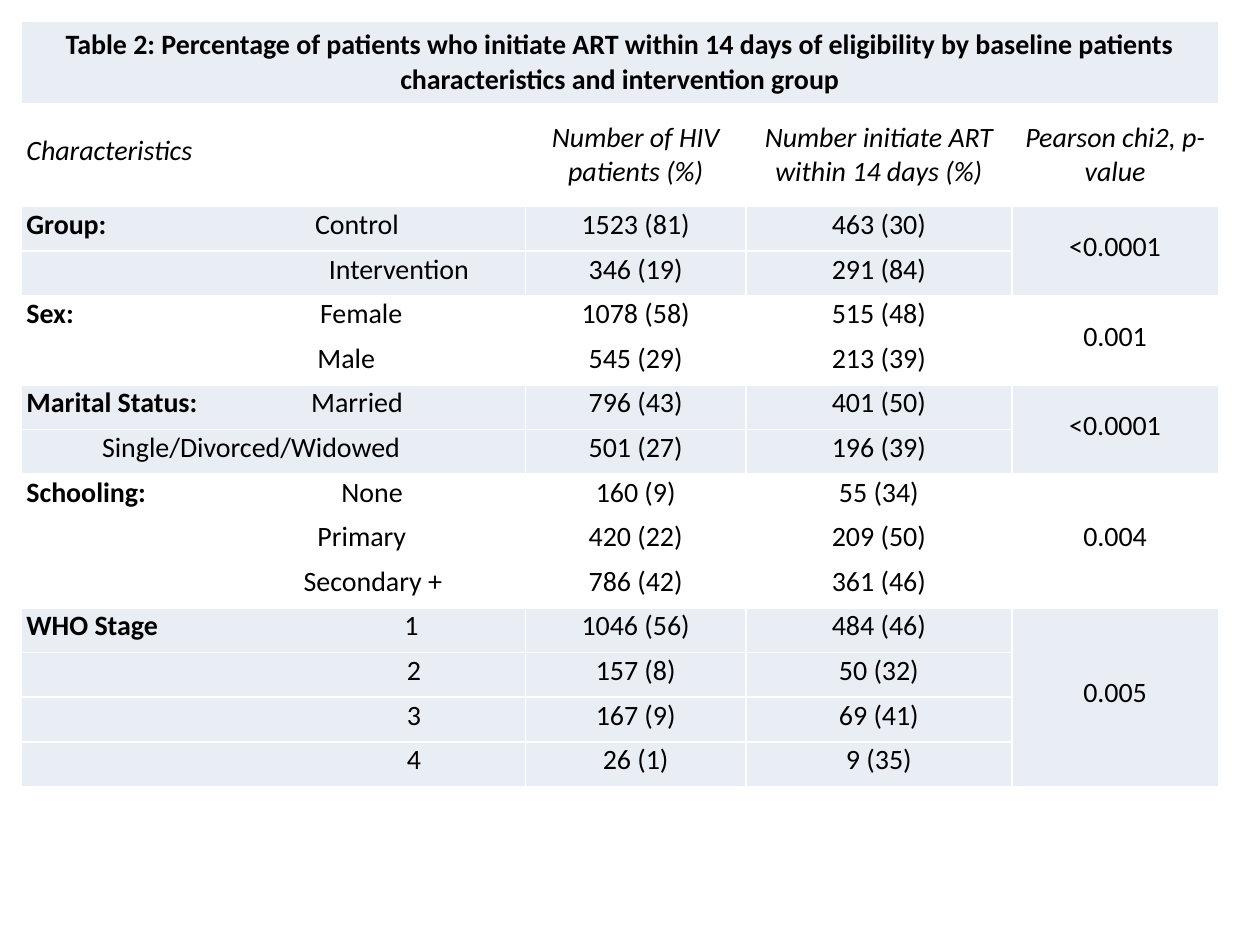
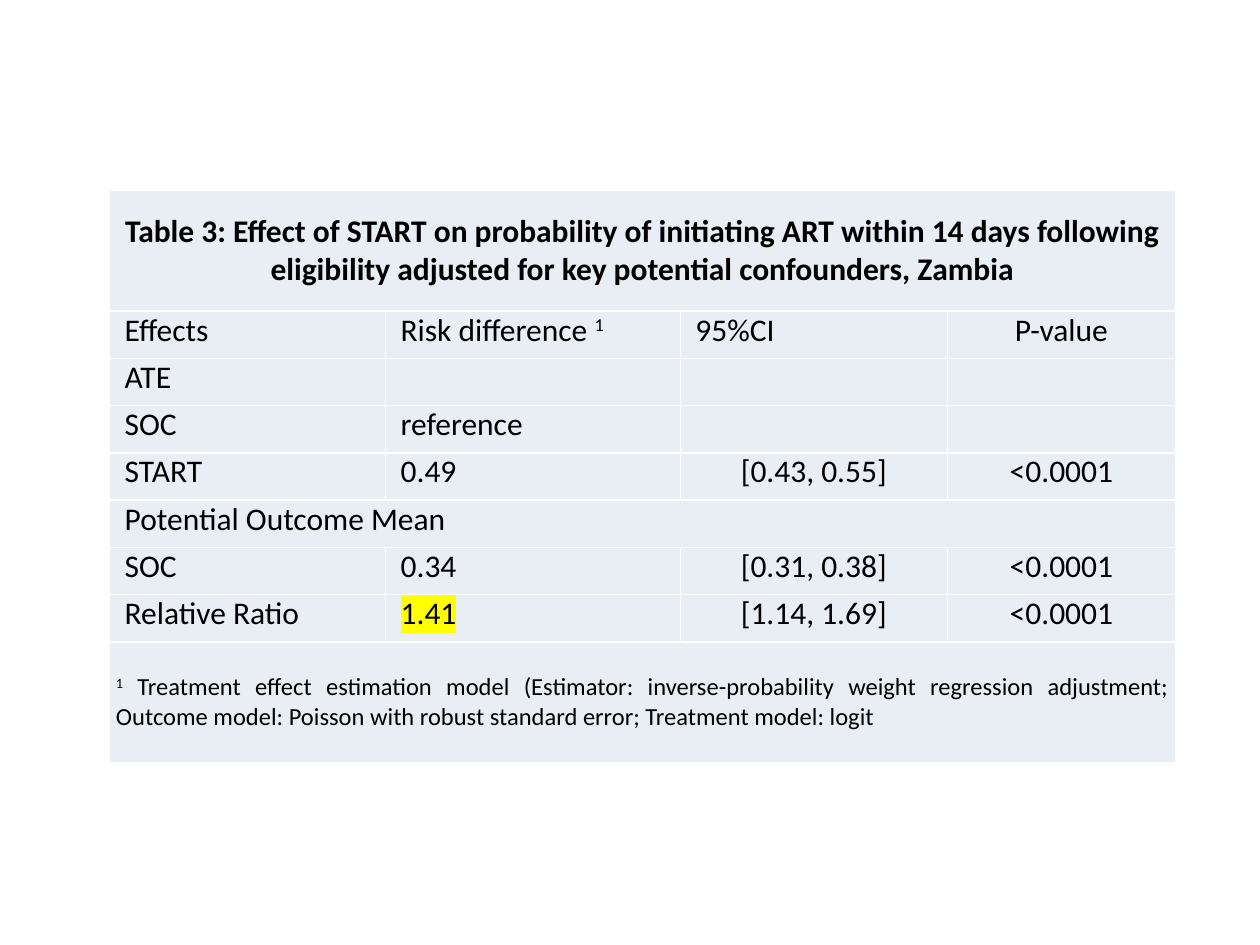
"""Build two slides with result tables of a study on early ART initiation."""
from itertools import product

from lxml.etree import SubElement
from pptx import Presentation
from pptx.dml.color import RGBColor
from pptx.enum.text import MSO_ANCHOR, PP_ALIGN
from pptx.oxml.ns import qn
from pptx.util import Inches, Pt

BAND = RGBColor(0xE9, 0xED, 0xF4)
BLACK = RGBColor(0, 0, 0)
WHITE = RGBColor(0xFF, 0xFF, 0xFF)
YELLOW = RGBColor(0xFF, 0xFF, 0)
FONT = "Calibri"
LEFT, CENTER, JUSTIFY = PP_ALIGN.LEFT, PP_ALIGN.CENTER, PP_ALIGN.JUSTIFY

PATIENTS_TITLE = ("Table 2: Percentage of patients who initiate ART within 14 days of "
                  "eligibility by baseline patients characteristics and intervention group")
PATIENTS_HEADER = ["Characteristics", "Number of HIV patients (%)",
                   "Number initiate ART within 14 days (%)", "Pearson chi2, p-value"]
PATIENT_GROUPS = [
    ("Group:", "<0.0001", [("Control", 2.29, "1523 (81)", "463 (30)"),
                           ("Intervention", 2.4, "346 (19)", "291 (84)")]),
    ("Sex:", "0.001", [("Female", 2.33, "1078 (58)", "515 (48)"),
                       ("Male", 2.31, "545 (29)", "213 (39)")]),
    ("Marital Status:", "<0.0001", [("Married", 2.26, "796 (43)", "401 (50)"),
                                    ("Single/Divorced/Widowed", 0.6, "501 (27)", "196 (39)")]),
    ("Schooling:", "0.004", [("None", 2.5, "160 (9)", "55 (34)"),
                             ("Primary", 2.31, "420 (22)", "209 (50)"),
                             ("Secondary +", 2.2, "786 (42)", "361 (46)")]),
    ("WHO Stage", "0.005", [("1", 3, "1046 (56)", "484 (46)"),
                            ("2", 3.02, "157 (8)", "50 (32)"),
                            ("3", 3.02, "167 (9)", "69 (41)"),
                            ("4", 3.02, "26 (1)", "9 (35)")]),
]

EFFECTS_TITLE = ("Table 3: Effect of START on probability of initiating ART within 14 days "
                 "following eligibility adjusted for key potential confounders, Zambia")
EFFECTS_ROWS = [
    ["Effects", [("Risk difference ", ""), ("1", "super")], "95%CI", "P-value"],
    ["ATE", "", "", ""],
    ["SOC", "reference", "", ""],
    ["START", "0.49", "[0.43, 0.55]", "<0.0001"],
    ["Potential Outcome Mean"],
    ["SOC", "0.34", "[0.31, 0.38]", "<0.0001"],
    ["Relative Ratio", [("1.41", "highlight")], "[1.14, 1.69]", "<0.0001"],
]
EFFECTS_NOTE = [("1", "super"),
                (" Treatment effect estimation model (Estimator: inverse-probability weight "
                 "regression adjustment; Outcome model: Poisson with robust standard error; "
                 "Treatment model: logit", "")]


def add_color(parent, tag, color):
    """Append an element that holds an RGB colour."""
    SubElement(SubElement(parent, qn(tag)), qn("a:srgbClr"), val=str(color))


def add_borders(cell):
    """Draw a white one-point line on each side of a cell."""
    properties = cell._tc.get_or_add_tcPr()
    for side in "LRTB":
        line = SubElement(properties, qn(f"a:ln{side}"), w=str(Pt(1)))
        add_color(line, "a:solidFill", WHITE)


def add_table(slide, left, top, widths, heights):
    """Add a plain table with white grid lines and no fill."""
    table = slide.shapes.add_table(len(heights), len(widths), Inches(left), Inches(top),
                                   Inches(sum(widths)), Inches(sum(heights))).table
    table.first_row = table.horz_banding = False
    for column, width in zip(table.columns, widths):
        column.width = Inches(width)
    for row, height in zip(table.rows, heights):
        row.height = Inches(height)
    for cell in table.iter_cells():
        add_borders(cell)
        cell.fill.background()
    return table


def fill_band(table, rows):
    """Shade every cell of the given rows."""
    for row, column in product(rows, range(len(table.columns))):
        fill = table.cell(row, column).fill
        fill.solid()
        fill.fore_color.rgb = BAND


def add_run(paragraph, text, style):
    """Add a run that may be bold, superscript or highlighted."""
    run = paragraph.add_run()
    run.text = text
    if style == "bold":
        run.font.bold = True
    elif style == "super":
        run._r.get_or_add_rPr().set("baseline", "30000")
    elif style == "highlight":
        add_color(run._r.get_or_add_rPr(), "a:highlight", YELLOW)


def write_cell(cell, content, size, margins, alignment=LEFT, spacing=None,
               bold=None, italic=None, indent=0, tab=0):
    """Write a string or a list of styled runs into a cell."""
    cell.vertical_anchor = MSO_ANCHOR.MIDDLE
    cell.margin_left = cell.margin_right = Inches(margins[0])
    cell.margin_top = cell.margin_bottom = Inches(margins[1])
    paragraph = cell.text_frame.paragraphs[0]
    paragraph.alignment = alignment
    if spacing:
        paragraph.line_spacing = Pt(spacing)
    properties = paragraph._p.get_or_add_pPr()
    if indent:
        properties.set("marL", str(Inches(indent)))
    if tab:
        stops = SubElement(properties, qn("a:tabLst"))
        SubElement(stops, qn("a:tab"), pos=str(Inches(tab)), algn="l")
    font = paragraph.font
    font.name, font.size, font.bold, font.italic = FONT, Pt(size), bold, italic
    font.color.rgb = BLACK
    for text, style in [(content, "")] if isinstance(content, str) else content:
        if text:
            add_run(paragraph, text, style)


def write_full_row(table, row, content, size, margins, **style):
    """Merge a whole row and write into it."""
    cell = table.cell(row, 0)
    cell.merge(table.cell(row, len(table.columns) - 1))
    write_cell(cell, content, size, margins, **style)


def write_group(table, first_row, heading, p_value, categories):
    """Write one characteristic with its categories and shared p-value."""
    body = dict(size=16, margins=(0.04, 0), spacing=15)
    for row, (name, offset, patients, initiated) in enumerate(categories, first_row):
        if row == first_row:
            label = [(heading, "bold"), (f"\t{name}", "")]
            write_cell(table.cell(row, 0), label, tab=offset, **body)
        else:
            write_cell(table.cell(row, 0), name, indent=offset, **body)
        for column, value in enumerate((patients, initiated), 1):
            write_cell(table.cell(row, column), value, alignment=CENTER, **body)
    p_cell = table.cell(first_row, 3)
    p_cell.merge(table.cell(first_row + len(categories) - 1, 3))
    write_cell(p_cell, p_value, 16, (0.07, 0.04), CENTER, 15)


def build_patients_slide(slide):
    """Build the table of patient characteristics."""
    row_count = sum(len(categories) for _, _, categories in PATIENT_GROUPS)
    table = add_table(slide, 0.17, 0.17, [4, 1.75, 2.11, 1.64],
                      [0.65, 0.82] + [0.354] * row_count)
    fill_band(table, [0])
    write_full_row(table, 0, PATIENTS_TITLE, 16, (0.07, 0.04), alignment=CENTER, bold=True)
    for column, text in enumerate(PATIENTS_HEADER):
        write_cell(table.cell(1, column), text, 16, (0.04, 0),
                   CENTER if column else LEFT, None if column else 15, italic=True)
    row = 2
    for index, (heading, p_value, categories) in enumerate(PATIENT_GROUPS):
        if index % 2 == 0:
            fill_band(table, range(row, row + len(categories)))
        write_group(table, row, heading, p_value, categories)
        row += len(categories)


def build_effects_slide(slide):
    """Build the table of adjusted effects."""
    table = add_table(slide, 0.87, 1.51, [2.19, 2.34, 2.12, 1.81],
                      [0.96] + [0.375] * len(EFFECTS_ROWS) + [0.96])
    fill_band(table, range(len(table.rows)))
    write_full_row(table, 0, EFFECTS_TITLE, 18, (0.05, 0.03), alignment=CENTER, bold=True)
    for row, values in enumerate(EFFECTS_ROWS, 1):
        if len(values) == 1:
            write_full_row(table, row, values[0], 18, (0.12, 0), spacing=17)
            continue
        for column, value in enumerate(values):
            centered = column == 3 or (column == 2 and row > 1)
            write_cell(table.cell(row, column), value, 18, (0.12, 0),
                       CENTER if centered else LEFT, 17)
    write_full_row(table, len(EFFECTS_ROWS) + 1, EFFECTS_NOTE, 14, (0.05, 0.03),
                   alignment=JUSTIFY)


def main():
    """Build and save the presentation."""
    presentation = Presentation()
    presentation.slide_width, presentation.slide_height = Inches(10), Inches(7.5)
    for build in (build_patients_slide, build_effects_slide):
        build(presentation.slides.add_slide(presentation.slide_layouts[6]))
    presentation.save("out.pptx")


if __name__ == "__main__":
    main()
